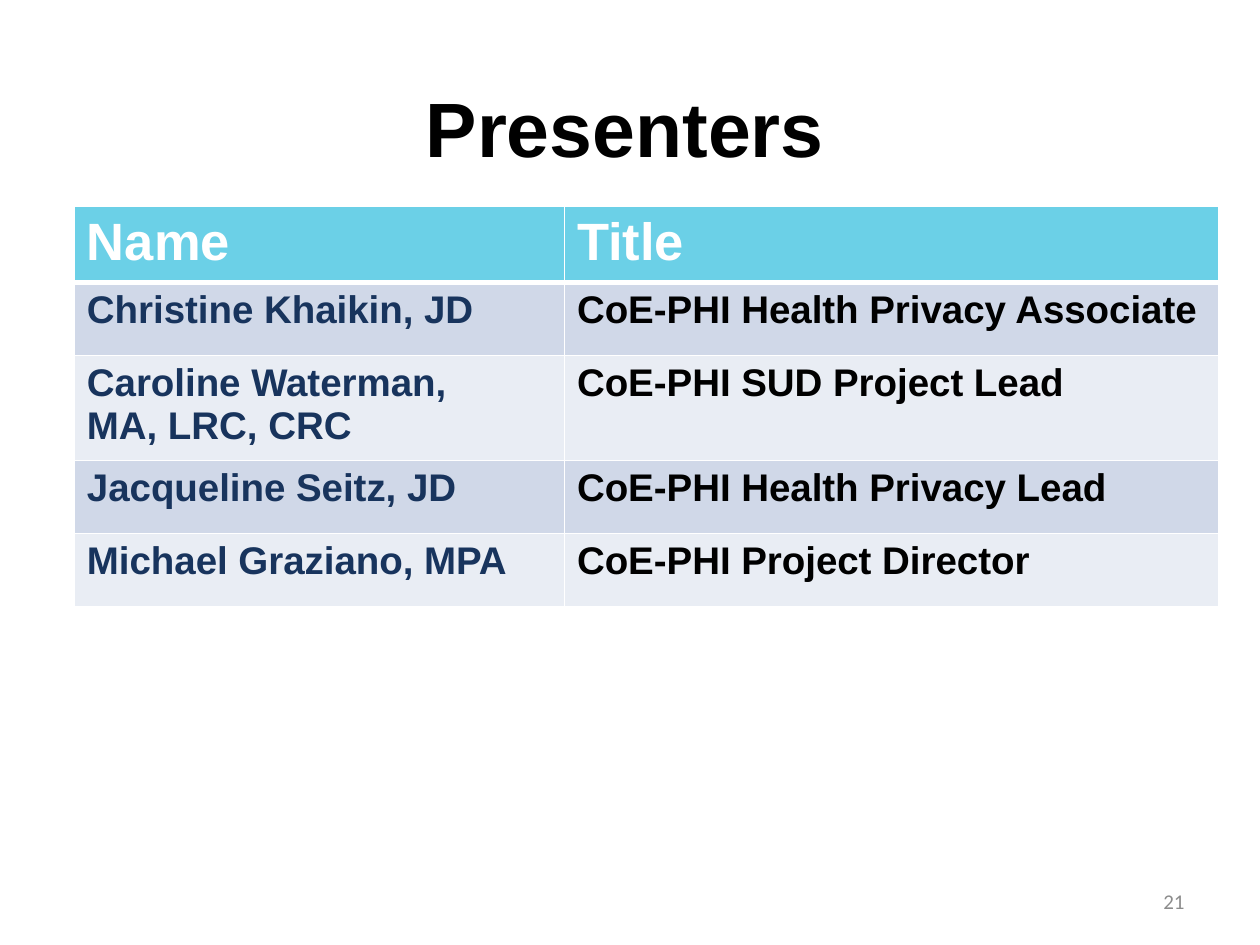
from dataclasses import dataclass

from lxml import etree
from pptx import Presentation
from pptx.dml.color import RGBColor
from pptx.enum.text import MSO_ANCHOR, PP_ALIGN
from pptx.oxml.ns import qn
from pptx.util import Inches, Pt

CENTER, RIGHT, LEFT = PP_ALIGN.CENTER, PP_ALIGN.RIGHT, PP_ALIGN.LEFT
MIDDLE = MSO_ANCHOR.MIDDLE

SLIDE_WIDTH, SLIDE_HEIGHT = 10, 7.5
TABLE_LEFT, TABLE_TOP = 0.59, 1.64
COLUMN_WIDTHS = (3.89, 5.19)
ROW_HEIGHT = 0.58

HEADINGS = ("Name", "Title")
PRESENTERS = (
    ("Christine Khaikin, JD", "CoE-PHI Health Privacy Associate"),
    ("Caroline Waterman,\nMA, LRC, CRC", "CoE-PHI SUD Project Lead"),
    ("Jacqueline Seitz, JD", "CoE-PHI Health Privacy Lead"),
    ("Michael Graziano, MPA", "CoE-PHI Project Director"),
)


@dataclass(frozen=True)
class Theme:
    white: str = "FFFFFF"
    black: str = "000000"
    navy: str = "18345D"
    grey: str = "8C8C8C"
    header_fill: str = "6BD0E7"
    band_fills: tuple = ("D0D8E8", "E9EDF4")
    text_font: str = "Arial"
    number_font: str = "Calibri"
    title_size: int = 44
    header_size: int = 30
    body_size: int = 22
    number_size: int = 12
    thin_border: int = 1
    thick_border: int = 3


THEME = Theme()


def write_text(frame, text, size, color, font=THEME.text_font, bold=True, align=LEFT):
    """Fill a text frame, one paragraph for each line of the text."""
    frame.text = text
    values = {"size": Pt(size), "name": font, "bold": bold}
    for paragraph in frame.paragraphs:
        paragraph.alignment = align
        for run in paragraph.runs:
            for name, value in values.items():
                setattr(run.font, name, value)
            run.font.color.rgb = RGBColor.from_string(color)


def add_label(slide, box, text, **text_format):
    shape = slide.shapes.add_textbox(*(Inches(length) for length in box))
    frame = shape.text_frame
    frame.word_wrap = True
    frame.vertical_anchor = MIDDLE
    write_text(frame, text, **text_format)


def set_borders(cell, widths):
    """Draw white cell borders; widths maps L, R, T and B to points."""
    properties = cell._tc.get_or_add_tcPr()
    for index, (side, width) in enumerate(widths.items()):
        line = etree.Element(qn(f"a:ln{side}"), w=str(Pt(width)))
        fill = etree.SubElement(line, qn("a:solidFill"))
        etree.SubElement(fill, qn("a:srgbClr"), val=THEME.white)
        properties.insert(index, line)


def style_cell(cell, text, row, column):
    if row == 0:
        fill, color, size = THEME.header_fill, THEME.white, THEME.header_size
    else:
        fill = THEME.band_fills[(row - 1) % 2]
        color = (THEME.navy, THEME.black)[column]
        size = THEME.body_size
    cell.fill.solid()
    cell.fill.fore_color.rgb = RGBColor.from_string(fill)
    write_text(cell.text_frame, text, size, color)
    set_borders(cell, {
        "L": THEME.thin_border,
        "R": THEME.thin_border,
        "T": THEME.thick_border if row == 1 else THEME.thin_border,
        "B": THEME.thick_border if row == 0 else THEME.thin_border,
    })


def add_presenter_table(slide):
    rows = (HEADINGS, *PRESENTERS)
    box = (TABLE_LEFT, TABLE_TOP, sum(COLUMN_WIDTHS), ROW_HEIGHT * len(rows))
    table = slide.shapes.add_table(
        len(rows), len(COLUMN_WIDTHS), *(Inches(length) for length in box)
    ).table
    for column, width in zip(table.columns, COLUMN_WIDTHS):
        column.width = Inches(width)
    for row_index, texts in enumerate(rows):
        table.rows[row_index].height = Inches(ROW_HEIGHT)
        for column_index, text in enumerate(texts):
            cell = table.cell(row_index, column_index)
            style_cell(cell, text, row_index, column_index)


def main():
    presentation = Presentation()
    presentation.slide_width = Inches(SLIDE_WIDTH)
    presentation.slide_height = Inches(SLIDE_HEIGHT)
    slide = presentation.slides.add_slide(presentation.slide_layouts[6])
    add_label(slide, (0.5, 0.42, 8.92, 1.17), "Presenters",
              size=THEME.title_size, color=THEME.black, align=CENTER)
    add_label(slide, (7.17, 6.95, 2.33, 0.4), "21", size=THEME.number_size,
              color=THEME.grey, font=THEME.number_font, bold=False, align=RIGHT)
    add_presenter_table(slide)
    presentation.save("out.pptx")


if __name__ == "__main__":
    main()
